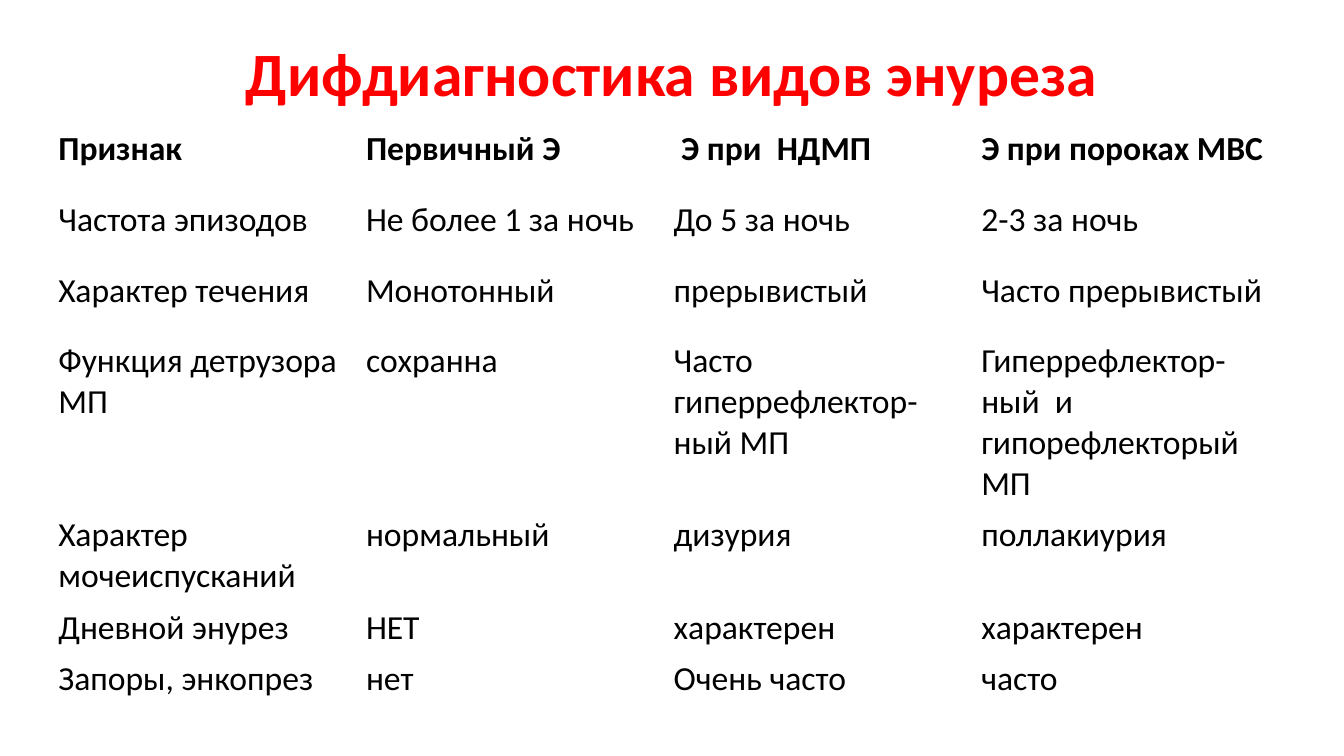
import pptx
import pptx.util
import pptx.dml.color
import pptx.enum.text
import pptx.oxml

Pt = pptx.util.Pt
RED = pptx.dml.color.RGBColor(0xFF, 0x00, 0x00)
BLACK = pptx.dml.color.RGBColor(0x00, 0x00, 0x00)
WHITE = pptx.dml.color.RGBColor(0xFF, 0xFF, 0xFF)
FONT = "Calibri"
DRAWING_NS = "http://schemas.openxmlformats.org/drawingml/2006/main"

SIGNS = [
    ("Признак", "Первичный Э", " Э при  НДМП", "Э при пороках МВС"),
    ("Частота эпизодов", "Не более 1 за ночь", "До 5 за ночь", "2-3 за ночь"),
    ("Характер течения", "Монотонный", "прерывистый", "Часто прерывистый"),
    ("Функция детрузора МП", "сохранна", "Часто гиперрефлектор-ный МП",
     "Гиперрефлектор-ный  и гипорефлекторый МП"),
    ("Характер мочеиспусканий", "нормальный", "дизурия", "поллакиурия"),
    ("Дневной энурез", "НЕТ", "характерен", "характерен"),
    ("Запоры, энкопрез", "нет", "Очень часто", "часто"),
]
ROW_HEIGHTS = [50.5, 50.5, 50.5, 93.5, 50.5, 29.5, 50.5]


def format_text(paragraph, size, color, bold):
    paragraph.font.name = FONT
    paragraph.font.size = Pt(size)
    paragraph.font.color.rgb = color
    paragraph.font.bold = bold


def add_heading(slide, left, top, width, height):
    heading = slide.shapes.title
    heading.left, heading.top = Pt(left), Pt(top)
    heading.width, heading.height = Pt(width), Pt(height)
    frame = heading.text_frame
    frame.text = "Дифдиагностика видов энуреза"
    frame.word_wrap = True
    frame.vertical_anchor = pptx.enum.text.MSO_ANCHOR.MIDDLE
    paragraph = frame.paragraphs[0]
    paragraph.alignment = pptx.enum.text.PP_ALIGN.CENTER
    paragraph.line_spacing = 0.9
    format_text(paragraph, 44, RED, True)


def set_borders(cell, top_width, bottom_width):
    properties = cell._tc.get_or_add_tcPr()
    widths = {"lnL": 1, "lnR": 1, "lnT": top_width, "lnB": bottom_width}
    for position, (side, width) in enumerate(widths.items()):
        border = pptx.oxml.parse_xml(
            f'<a:{side} xmlns:a="{DRAWING_NS}" w="{Pt(width)}"><a:solidFill>'
            f'<a:srgbClr val="{WHITE}"/></a:solidFill></a:{side}>')
        properties.insert(position, border)


def add_signs_table(slide, left, top, width, height):
    frame = slide.shapes.add_table(
        len(SIGNS), len(SIGNS[0]), Pt(left), Pt(top), Pt(width), Pt(height))
    table = frame.table
    table.horz_banding = False
    for column in table.columns:
        column.width = Pt(width / len(SIGNS[0]))
    for row_index, signs in enumerate(SIGNS):
        table.rows[row_index].height = Pt(ROW_HEIGHTS[row_index])
        for column_index, sign in enumerate(signs):
            cell = table.cell(row_index, column_index)
            cell.text = sign
            cell.fill.background()
            set_borders(cell, 3 if row_index == 1 else 1, 3 if row_index == 0 else 1)
            format_text(cell.text_frame.paragraphs[0], 24, BLACK, row_index == 0)
    frame.height = Pt(height)


def main():
    presentation = pptx.Presentation()
    presentation.slide_width = Pt(960)
    presentation.slide_height = Pt(540)
    slide = presentation.slides.add_slide(presentation.slide_layouts[5])
    add_heading(slide, 156, 21.5, 648, 67)
    add_signs_table(slide, 34.5, 88.5, 879, 425)
    presentation.save("out.pptx")


if __name__ == "__main__":
    main()
